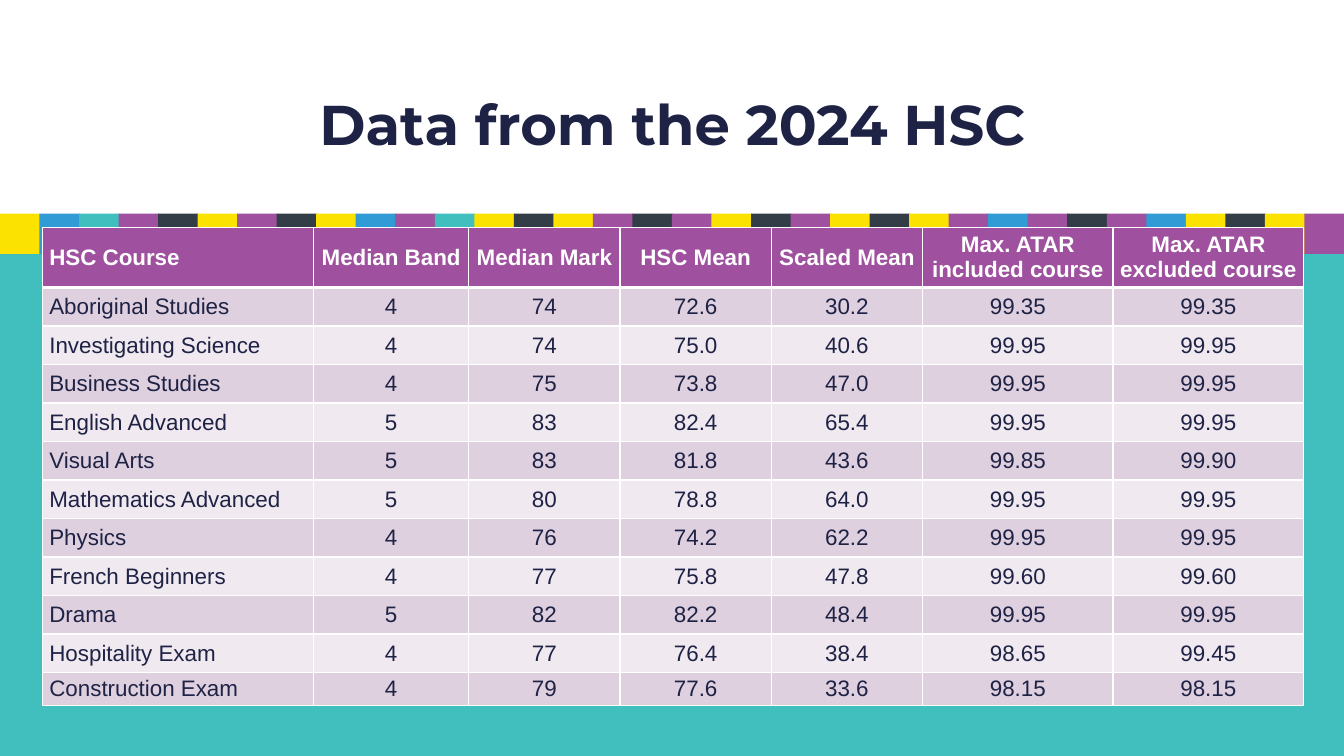
"""Build the slide with the table of 2024 HSC course results."""
from lxml import etree
from pptx import Presentation, util as u
from pptx.dml.color import RGBColor
from pptx.enum import shapes, text
from pptx.oxml import ns

COLORS = {"teal": "40BFBE", "white": "FFFFFF", "yellow": "FBE200", "blue": "319BD6",
          "purple": "9F519F", "dark": "333D47", "navy": "1E2245",
          "band": "DFD0DF", "pale": "F0E9F0"}
RGB = {name: RGBColor.from_string(value) for name, value in COLORS.items()}
TILES = {"Y": "yellow", "B": "blue", "T": "teal", "P": "purple", "D": "dark"}
STRIP = "YBTPDYPDYBPTYDYPDPYDPYDYPBPDPBYDYP"
COLUMNS = [("HSC Course", 2.69), ("Median Band", 1.54), ("Median Mark", 1.5),
           ("HSC Mean", 1.5), ("Scaled Mean", 1.5),
           ("Max. ATAR included course", 1.89), ("Max. ATAR excluded course", 1.89)]
COURSES = [
    ("Aboriginal Studies", "4", "74", "72.6", "30.2", "99.35", "99.35"),
    ("Investigating Science", "4", "74", "75.0", "40.6", "99.95", "99.95"),
    ("Business Studies", "4", "75", "73.8", "47.0", "99.95", "99.95"),
    ("English Advanced", "5", "83", "82.4", "65.4", "99.95", "99.95"),
    ("Visual Arts", "5", "83", "81.8", "43.6", "99.85", "99.90"),
    ("Mathematics Advanced", "5", "80", "78.8", "64.0", "99.95", "99.95"),
    ("Physics", "4", "76", "74.2", "62.2", "99.95", "99.95"),
    ("French Beginners", "4", "77", "75.8", "47.8", "99.60", "99.60"),
    ("Drama", "5", "82", "82.2", "48.4", "99.95", "99.95"),
    ("Hospitality Exam", "4", "77", "76.4", "38.4", "98.65", "99.45"),
    ("Construction Exam", "4", "79", "77.6", "33.6", "98.15", "98.15"),
]


def add_rect(sl, x, y, w, h, color):
    sp = sl.shapes.add_shape(shapes.MSO_SHAPE.RECTANGLE, x, y, w, h)
    sp.shadow.inherit = False
    sp.fill.solid()
    sp.fill.fore_color.rgb = RGB[color]
    sp.line.fill.background()


def add_border(cell, side, points):
    pr = cell._tc.get_or_add_tcPr()
    ln = etree.Element(ns.qn(f"a:ln{side}"), w=str(u.Pt(points)))
    fill = etree.SubElement(ln, ns.qn("a:solidFill"))
    etree.SubElement(fill, ns.qn("a:srgbClr"), val=COLORS["white"])
    pr.insert("LRTB".index(side), ln)


prs = Presentation()
prs.slide_width, prs.slide_height = u.Inches(13.33), u.Inches(7.5)
W = prs.slide_width
sl = prs.slides.add_slide(prs.slide_layouts[6])
sl.background.fill.solid()
sl.background.fill.fore_color.rgb = RGB["teal"]

add_rect(sl, 0, 0, W, u.Inches(2.17), "white")
tile = u.Inches(0.4)
for i, key in enumerate(STRIP):
    add_rect(sl, W * i // len(STRIP), u.Inches(2.12), tile, tile, TILES[key])

title = sl.shapes.add_textbox(u.Inches(0.92), u.Inches(0.6), u.Inches(11.5), u.Inches(1.32))
tf = title.text_frame
tf.word_wrap = True
tf.vertical_anchor = text.MSO_ANCHOR.MIDDLE
p = tf.paragraphs[0]
p.text = "Data from the 2024 HSC"
p.alignment = text.PP_ALIGN.CENTER
p.line_spacing = 0.9
p.font.name, p.font.size, p.font.bold = "Montserrat", u.Pt(40), True
p.font.color.rgb = RGB["navy"]

heights = [0.56] + [0.382] * 10 + [0.33]
rows = [[name for name, width in COLUMNS]] + COURSES
tbl = sl.shapes.add_table(len(rows), len(COLUMNS), u.Inches(0.42), u.Inches(2.26),
                          u.Inches(12.51), u.Inches(sum(heights))).table
for col, (name, width) in zip(tbl.columns, COLUMNS):
    col.width = u.Inches(width)
for r, (row, height) in enumerate(zip(rows, heights)):
    tbl.rows[r].height = u.Inches(height)
    header = r == 0
    for c, value in enumerate(row):
        cell = tbl.cell(r, c)
        cell.margin_left = cell.margin_right = u.Inches(0.07)
        cell.margin_top = cell.margin_bottom = u.Inches(0.03)
        cell.vertical_anchor = text.MSO_ANCHOR.MIDDLE
        cell.fill.solid()
        cell.fill.fore_color.rgb = RGB["purple" if header else "band" if r % 2 else "pale"]
        p = cell.text_frame.paragraphs[0]
        p.text = value
        p.alignment = text.PP_ALIGN.CENTER if c else text.PP_ALIGN.LEFT
        p.font.name, p.font.size, p.font.bold = "Arial", u.Pt(16), header
        p.font.color.rgb = RGB["white" if header else "navy"]
        rule = 3 if c else 2.25
        for side, points in zip("LRTB", (1, 1, rule if r == 1 else 1, rule if header else 1)):
            add_border(cell, side, points)

prs.save("out.pptx")
